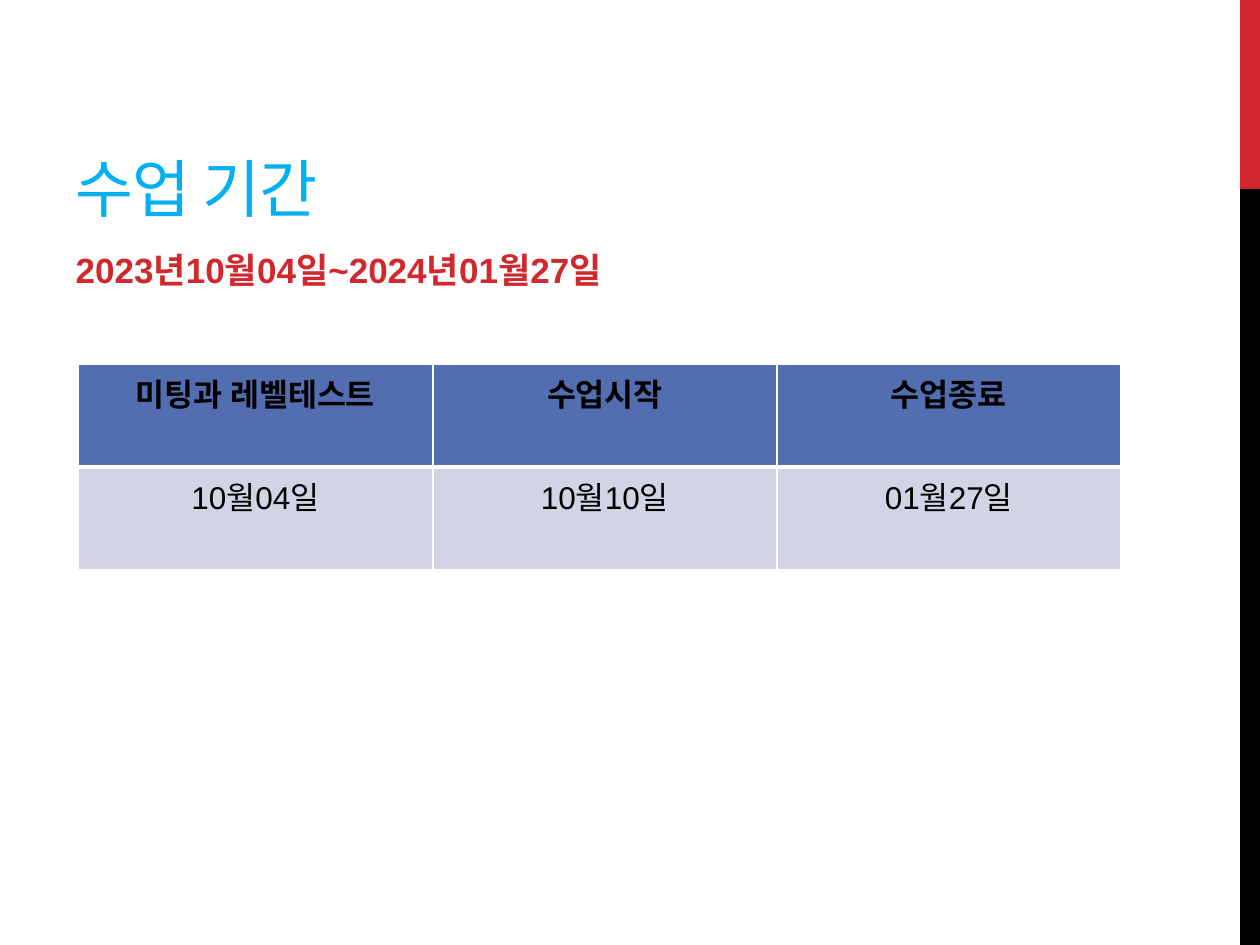
"""Build the class period slide."""
from lxml import etree
from pptx import Presentation
from pptx import util as u
from pptx.dml import color
from pptx.enum import shapes, text
from pptx.oxml import ns

SCALE = 914400 / 126
COLORS = {
    "red": "D1282E", "black": "000000", "blue": "00B0F0",
    "header": "526DB0", "body": "D1D4E4", "white": "FFFFFF",
}
SCHEDULE = [
    ["미팅과 레벨테스트", "수업시작", "수업종료"],
    ["10월04일", "10월10일", "01월27일"],
]
COLUMN_WIDTHS = [355, 344, 344]
ROW_HEIGHT = 103


def px(*lengths):
    """Turn px lengths into a list of EMU lengths."""
    return [u.Emu(round(length * SCALE)) for length in lengths]


def rgb(name):
    """Look up a named colour."""
    return color.RGBColor.from_string(COLORS[name])


def set_values(target, values):
    """Set attributes from a dict of format values."""
    for name, value in values.items():
        setattr(target, name, value)


def write(frame, words, hue, alignment, **font):
    """Write one formatted paragraph into a text frame."""
    para = frame.paragraphs[0]
    para.alignment = alignment
    span = para.add_run()
    span.text = words
    set_values(span.font, font)
    span.font.color.rgb = rgb(hue)
    return para, span


def place(holder, box, anchor):
    """Move a placeholder and set how its text sits."""
    set_values(holder, dict(zip(("left", "top", "width", "height"), px(*box))))
    set_values(holder.text_frame, {
        "word_wrap": True,
        "auto_size": text.MSO_AUTO_SIZE.NONE,
        "vertical_anchor": anchor,
    })


def add_title(page, words):
    """Fill the title placeholder."""
    holder = page.shapes.title
    place(holder, (63, 21, 798, 210), text.MSO_ANCHOR.BOTTOM)
    _, span = write(holder.text_frame, words, "blue", text.PP_ALIGN.LEFT,
                    name="Montserrat", size=u.Pt(36))
    span.font._element.set("spc", "-60")


def add_period(page, words):
    """Fill the body placeholder with an unbulleted line."""
    holder = page.placeholders[1]
    place(holder, (63, 242, 1050, 602), text.MSO_ANCHOR.TOP)
    para, _ = write(holder.text_frame, words, "red", text.PP_ALIGN.LEFT,
                    name="Arial", size=u.Pt(20), bold=True)
    set_values(para, {"space_before": u.Pt(4), "space_after": u.Pt(6)})
    properties = para._p.get_or_add_pPr()
    properties.set("marL", "0")
    properties.set("indent", "0")
    etree.SubElement(properties, ns.qn("a:buNone"))


def add_bar(page, box, hue):
    """Add a plain rectangle at the page edge."""
    bar = page.shapes.add_shape(shapes.MSO_SHAPE.RECTANGLE, *px(*box))
    bar.shadow.inherit = False
    bar.fill.solid()
    bar.fill.fore_color.rgb = rgb(hue)
    bar.line.fill.background()


def add_border(cell, side, points):
    """Draw one white cell border."""
    line = etree.Element(ns.qn(f"a:ln{side}"), w=str(u.Pt(points)))
    fill = etree.SubElement(line, ns.qn("a:solidFill"))
    etree.SubElement(fill, ns.qn("a:srgbClr"), val=COLORS["white"])
    return line


def style_cell(cell, words, is_header):
    """Fill, border and write one table cell."""
    cell.fill.solid()
    cell.fill.fore_color.rgb = rgb("header" if is_header else "body")
    widths = {"L": 1, "R": 1, "T": 1 if is_header else 3, "B": 3 if is_header else 1}
    properties = cell._tc.get_or_add_tcPr()
    for index, (side, points) in enumerate(widths.items()):
        properties.insert(index, add_border(cell, side, points))
    write(cell.text_frame, words, "black", text.PP_ALIGN.CENTER,
          name="Arial", size=u.Pt(18), bold=is_header)


def add_schedule(page, rows):
    """Add the schedule table."""
    box = px(78, 364, sum(COLUMN_WIDTHS), ROW_HEIGHT * len(rows))
    table = page.shapes.add_table(len(rows), len(COLUMN_WIDTHS), *box).table
    table.horz_banding = False
    for column, width in zip(table.columns, px(*COLUMN_WIDTHS)):
        column.width = width
    for row_index, row in enumerate(rows):
        table.rows[row_index].height = px(ROW_HEIGHT)[0]
        for column_index, words in enumerate(row):
            style_cell(table.cell(row_index, column_index), words, row_index == 0)


def main():
    """Build and save the deck."""
    deck = Presentation()
    deck.slide_width, deck.slide_height = px(1260, 945)
    page = deck.slides.add_slide(deck.slide_layouts[1])
    add_bar(page, (1240, 0, 20, 189), "red")
    add_bar(page, (1240, 189, 20, 756), "black")
    add_title(page, "수업 기간")
    add_period(page, "2023년10월04일~2024년01월27일")
    add_schedule(page, SCHEDULE)
    deck.save("out.pptx")


if __name__ == "__main__":
    main()
